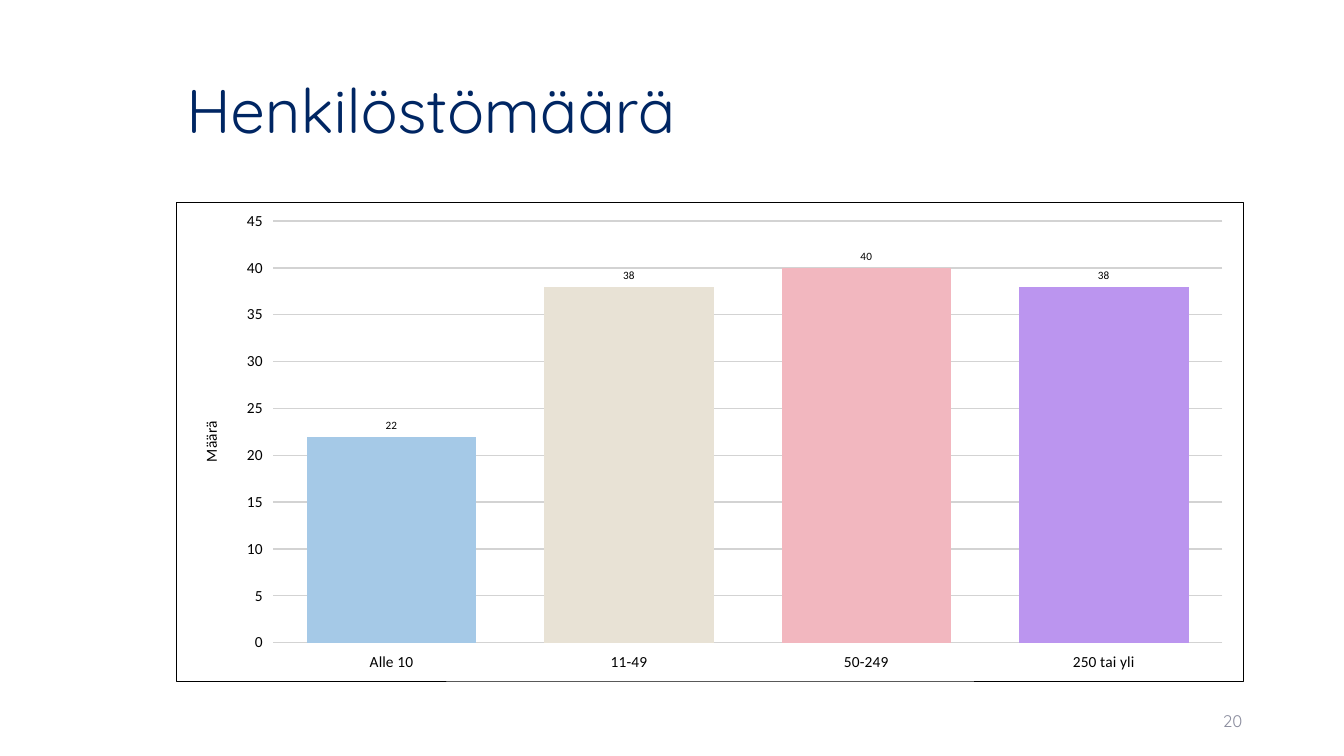
from dataclasses import dataclass

import lxml.etree
import pptx
import pptx.chart.data
import pptx.dml.color
import pptx.enum.chart
import pptx.enum.text
import pptx.oxml
import pptx.oxml.ns
import pptx.util

SLIDE_WIDTH = pptx.util.Inches(13.33)
SLIDE_HEIGHT = pptx.util.Inches(7.5)
BLANK_LAYOUT = 6
HEADING_FONT = "Quicksand"
CHART_FONT = "Calibri"
BLACK = "000000"
GRID_GREY = "D3D3D3"


@dataclass(frozen=True)
class Area:
    """A rectangle in shares of the slide's width and height."""
    left: float
    top: float
    width: float
    height: float

    def emu(self) -> tuple[int, int, int, int]:
        return (round(self.left * SLIDE_WIDTH), round(self.top * SLIDE_HEIGHT),
                round(self.width * SLIDE_WIDTH), round(self.height * SLIDE_HEIGHT))


@dataclass(frozen=True)
class Caption:
    words: str
    area: Area
    size: float
    colour: str
    align: pptx.enum.text.PP_ALIGN
    line_spacing: float


@dataclass(frozen=True)
class StaffBand:
    label: str
    count: int
    colour: str


CONTENT_LEFT = 1.75 / 13.33
CONTENT_WIDTH = 10.59 / 13.33
CHART_AREA = Area(CONTENT_LEFT, 2 / 7.5, CONTENT_WIDTH, 4.76 / 7.5)

CAPTIONS = [
    Caption("Henkilöstömäärä", Area(CONTENT_LEFT, 0.4 / 7.5, CONTENT_WIDTH, 1.45 / 7.5),
            44, "002663", pptx.enum.text.PP_ALIGN.LEFT, 0.9),
    Caption("20", Area(9.42 / 13.33, 6.95 / 7.5, 3 / 13.33, 0.4 / 7.5),
            12, "8C8E9F", pptx.enum.text.PP_ALIGN.RIGHT, 1.0),
]

STAFF_BANDS = [
    StaffBand("Alle 10", 22, "A5C9E7"),
    StaffBand("11-49", 38, "E8E2D5"),
    StaffBand("50-249", 40, "F2B7BF"),
    StaffBand("250 tai yli", 38, "BB95EF"),
]


def rgb(colour: str) -> pptx.dml.color.RGBColor:
    return pptx.dml.color.RGBColor.from_string(colour)


def style_font(font, name: str, size: float, colour: str) -> None:
    font.name = name
    font.size = pptx.util.Pt(size)
    font.bold = False
    font.color.rgb = rgb(colour)


def add_caption(slide, caption: Caption) -> None:
    frame = slide.shapes.add_textbox(*caption.area.emu()).text_frame
    frame.word_wrap = True
    frame.vertical_anchor = pptx.enum.text.MSO_ANCHOR.MIDDLE
    paragraph = frame.paragraphs[0]
    paragraph.alignment = caption.align
    paragraph.line_spacing = caption.line_spacing
    run = paragraph.add_run()
    run.text = caption.words
    style_font(run.font, HEADING_FONT, caption.size, caption.colour)


def add_frame(chart, colour: str, points: float) -> None:
    """Outline the whole chart; python-pptx has no call for this."""
    frame = pptx.oxml.parse_xml(
        f'<c:spPr {pptx.oxml.ns.nsdecls("c", "a")}><a:noFill/>'
        f'<a:ln w="{pptx.util.Pt(points)}"><a:solidFill><a:srgbClr val="{colour}"/>'
        '</a:solidFill></a:ln></c:spPr>')
    chart.element.find(pptx.oxml.ns.qn("c:chart")).addnext(frame)


def place_plot(chart, left: float, top: float, width: float, height: float) -> None:
    """Fix the inner plot area, in shares of the chart's size."""
    plot_area = chart.element.find(".//" + pptx.oxml.ns.qn("c:plotArea"))
    for automatic in plot_area.findall(pptx.oxml.ns.qn("c:layout")):
        plot_area.remove(automatic)
    layout = pptx.oxml.parse_xml(f'<c:layout {pptx.oxml.ns.nsdecls("c")}/>')
    manual = lxml.etree.SubElement(layout, pptx.oxml.ns.qn("c:manualLayout"))
    settings = {"layoutTarget": "inner", "xMode": "edge", "yMode": "edge",
                "x": left, "y": top, "w": width, "h": height}
    for tag, value in settings.items():
        lxml.etree.SubElement(manual, pptx.oxml.ns.qn(f"c:{tag}")).set("val", str(value))
    plot_area.insert(0, layout)


def style_axes(chart) -> None:
    for axis in (chart.category_axis, chart.value_axis):
        axis.major_tick_mark = pptx.enum.chart.XL_TICK_MARK.OUTSIDE
        axis.format.line.fill.background()
        style_font(axis.tick_labels.font, CHART_FONT, 11, BLACK)

    counts = chart.value_axis
    counts.minimum_scale = 0
    counts.maximum_scale = 45
    counts.major_unit = 5
    counts.has_major_gridlines = True
    counts.major_gridlines.format.line.color.rgb = rgb(GRID_GREY)
    counts.major_gridlines.format.line.width = pptx.util.Pt(1)
    title_run = counts.axis_title.text_frame.paragraphs[0].add_run()
    title_run.text = "Määrä"
    style_font(title_run.font, CHART_FONT, 11, BLACK)


def add_staff_chart(slide, bands: list[StaffBand]) -> None:
    staff = pptx.chart.data.CategoryChartData()
    staff.categories = [band.label for band in bands]
    staff.add_series("Series 1", [band.count for band in bands])
    chart = slide.shapes.add_chart(
        pptx.enum.chart.XL_CHART_TYPE.COLUMN_CLUSTERED, *CHART_AREA.emu(), staff).chart
    chart.has_title = False
    chart.has_legend = False
    style_font(chart.font, CHART_FONT, 11, BLACK)
    style_axes(chart)

    columns = chart.plots[0]
    columns.vary_by_categories = False
    columns.gap_width = 40
    columns.overlap = -2
    series = columns.series[0]
    for index, band in enumerate(bands):
        fill = series.points[index].format.fill
        fill.solid()
        fill.fore_color.rgb = rgb(band.colour)

    labels = series.data_labels
    labels.show_value = True
    labels.number_format = "0"
    labels.number_format_is_linked = False
    labels.position = pptx.enum.chart.XL_LABEL_POSITION.OUTSIDE_END
    style_font(labels.font, CHART_FONT, 8, BLACK)

    add_frame(chart, BLACK, 0.5)
    place_plot(chart, 0.09, 0.04, 0.89, 0.88)


def main() -> None:
    presentation = pptx.Presentation()
    presentation.slide_width = SLIDE_WIDTH
    presentation.slide_height = SLIDE_HEIGHT
    slide = presentation.slides.add_slide(presentation.slide_layouts[BLANK_LAYOUT])
    for caption in CAPTIONS:
        add_caption(slide, caption)
    add_staff_chart(slide, STAFF_BANDS)
    presentation.save("out.pptx")


if __name__ == "__main__":
    main()
